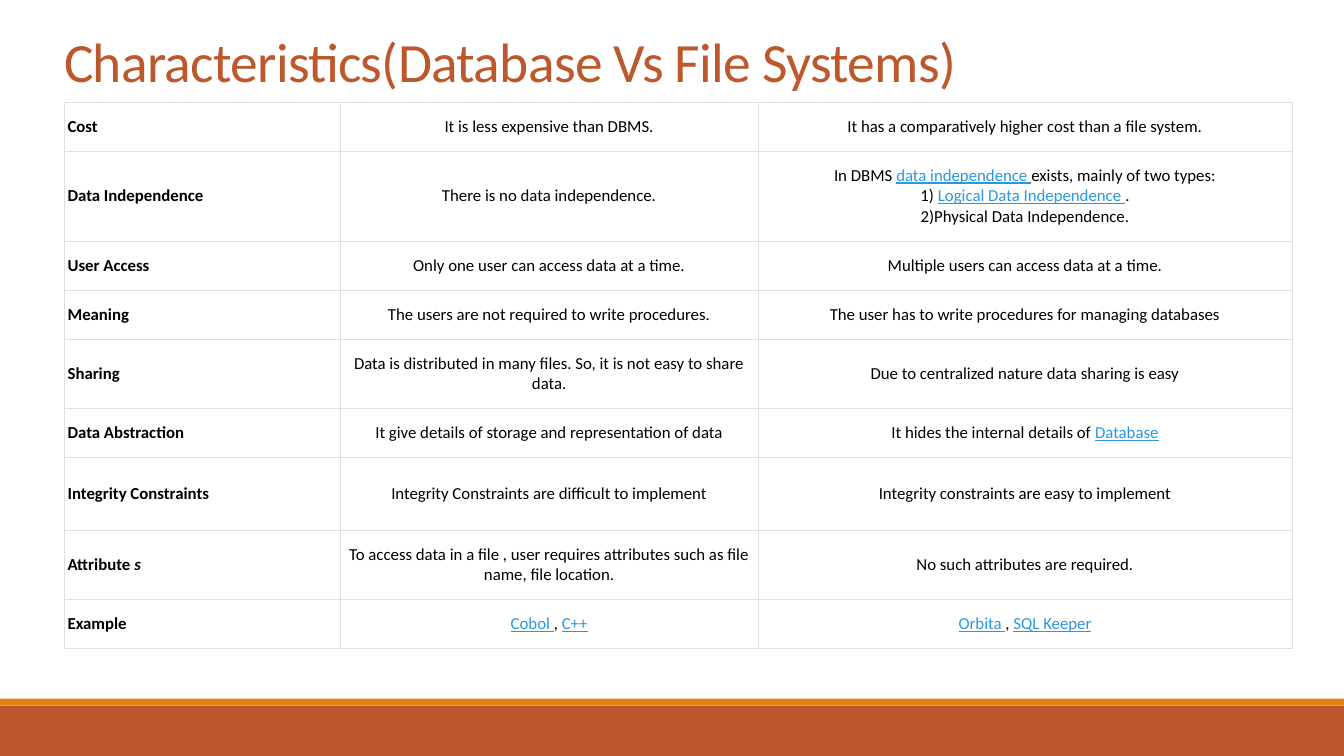
from dataclasses import dataclass

from lxml.etree import SubElement
from pptx import Presentation
from pptx.dml.color import RGBColor
from pptx.enum.shapes import MSO_SHAPE
from pptx.enum.text import MSO_ANCHOR, MSO_AUTO_SIZE, PP_ALIGN
from pptx.oxml.ns import qn
from pptx.util import Pt


@dataclass(frozen=True)
class Theme:
    font: str = "Calibri"
    head: float = 39.6
    body: float = 12
    rust: str = "BD582C"
    amber: str = "E48312"
    ink: str = "000000"
    link: str = "2998E3"
    rule: str = "DFDFDF"
    paper: str = "FFFFFF"


THEME = Theme()
WIDTH, HEIGHT = 960, 540
COLS = (196.8, 298.8, 381)
LINK = {"color": THEME.link, "underline": True}

# Height, label, file system, database; text between bars is marked.
ROWS = (
    (35.1, "Cost", "It is less expensive than DBMS.",
     "It has a comparatively higher cost than a file system."),
    (64, "Data Independence", "There is no data independence.",
     "In DBMS |data independence |exists, mainly of two types:\n"
     "1) |Logical Data Independence |.\n"
     "2)Physical Data Independence."),
    (35.1, "User Access", "Only one user can access data at a time.",
     "Multiple users can access data at a time."),
    (35.1, "Meaning", "The users are not required to write procedures.",
     "The user has to write procedures for managing databases"),
    (49.5, "Sharing",
     "Data is distributed in many files. So, it is not easy to share data.",
     "Due to centralized nature data sharing is easy"),
    (35.1, "Data Abstraction",
     "It give details of storage and representation of data",
     "It hides the internal details of |Database|"),
    (51.8, "Integrity Constraints",
     "Integrity Constraints are difficult to implement",
     "Integrity constraints are easy to implement"),
    (49.5, "Attribute |s|",
     "To access data in a file , user requires attributes such as file name, "
     "file location.",
     "No such attributes are required."),
    (35.1, "Example", "|Cobol |, |C++|", "|Orbita |, |SQL Keeper|"),
)


def style(run, size, color, bold=False, italic=False, underline=False):
    font = run.font
    font.name, font.size = THEME.font, Pt(size)
    font.color.rgb = RGBColor.from_string(color)
    font.bold, font.italic, font.underline = bold, italic, underline


def write(frame, text, mark=None, align=PP_ALIGN.LEFT, space=1.0, track=0,
          **form):
    """Fill a frame; parts between bars get the extra format in mark."""
    for i, line in enumerate(text.split("\n")):
        para = frame.paragraphs[0] if i == 0 else frame.add_paragraph()
        para.alignment, para.line_spacing = align, space
        for j, part in enumerate(line.split("|")):
            if part:
                run = para.add_run()
                run.text = part
                style(run, **(form | mark if j % 2 else form))
                if track:
                    run.font._element.set("spc", str(int(track * 100)))


def inset(box, side, top):
    box.margin_left = box.margin_right = Pt(side)
    box.margin_top = box.margin_bottom = Pt(top)


def add_title(slide, text):
    title = slide.shapes.title
    title.left, title.top = Pt(30.2), Pt(22.3)
    title.width, title.height = Pt(848.2), Pt(48.2)
    frame = title.text_frame
    frame.auto_size, frame.word_wrap = MSO_AUTO_SIZE.NONE, True
    frame.vertical_anchor = MSO_ANCHOR.BOTTOM
    inset(frame, 7.2, 3.6)
    frame.margin_left = Pt(15.6)
    write(frame, text, space=0.85, track=-0.5, size=THEME.head,
          color=THEME.rust)


def add_band(slide, top, height, color):
    band = slide.shapes.add_shape(MSO_SHAPE.RECTANGLE, 0, Pt(top), Pt(WIDTH),
                                  Pt(height))
    band.shadow.inherit = False
    band.fill.solid()
    band.fill.fore_color.rgb = RGBColor.from_string(color)
    band.line.fill.background()


def frame_cell(cell):
    """Draw the four borders, then the fill, in schema order."""
    props = cell._tc.get_or_add_tcPr()
    for side in ("lnL", "lnR", "lnT", "lnB"):
        line = SubElement(props, qn(f"a:{side}"), w=str(Pt(0.23)))
        fill = SubElement(line, qn("a:solidFill"))
        SubElement(fill, qn("a:srgbClr"), val=THEME.rule)
    cell.fill.solid()
    cell.fill.fore_color.rgb = RGBColor.from_string(THEME.paper)


def fill_cell(cell, text, label):
    frame_cell(cell)
    cell.vertical_anchor = MSO_ANCHOR.MIDDLE
    inset(cell, *((2.2, 4.3) if label else (5.8, 8.6)))
    write(cell.text_frame, text, mark={"italic": True} if label else LINK,
          align=PP_ALIGN.JUSTIFY if label else PP_ALIGN.CENTER,
          size=THEME.body, color=THEME.ink, bold=label)


def add_grid(slide, left, top):
    high = sum(row[0] for row in ROWS)
    table = slide.shapes.add_table(len(ROWS), len(COLS), Pt(left), Pt(top),
                                   Pt(sum(COLS)), Pt(high)).table
    table.first_row = table.horz_banding = False
    for col, width in zip(table.columns, COLS):
        col.width = Pt(width)
    for row, (height, *texts) in zip(table.rows, ROWS):
        row.height = Pt(height)
        for i, (cell, text) in enumerate(zip(row.cells, texts)):
            fill_cell(cell, text, label=i == 0)


def main():
    deck = Presentation()
    deck.slide_width, deck.slide_height = Pt(WIDTH), Pt(HEIGHT)
    slide = deck.slides.add_slide(deck.slide_layouts[5])
    add_band(slide, 504, 36, THEME.rust)
    add_band(slide, 499, 5, THEME.amber)
    add_title(slide, "Characteristics(Database Vs File Systems)")
    add_grid(slide, 46.1, 72.9)
    deck.save("out.pptx")


if __name__ == "__main__":
    main()
